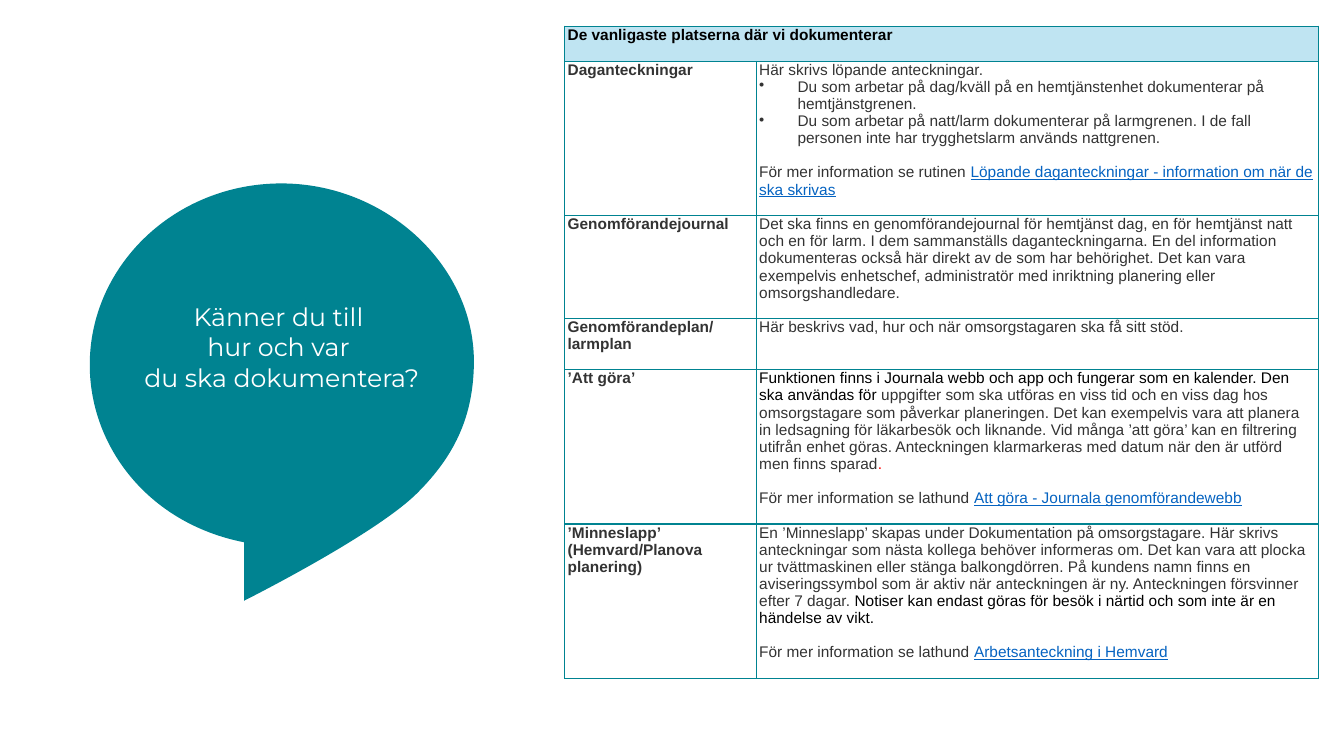
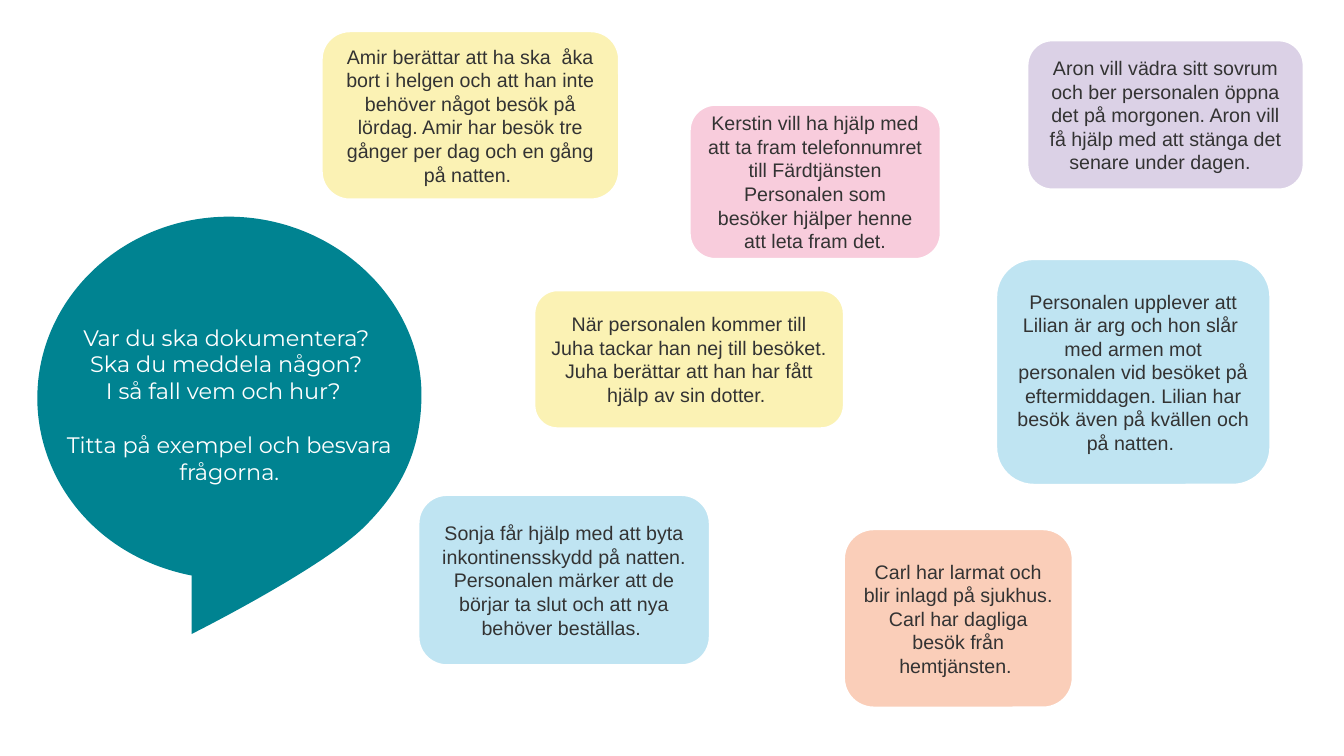
from lxml.etree import SubElement
from pptx import Presentation
from pptx.dml.color import RGBColor
from pptx.enum.shapes import MSO_SHAPE as Shape
from pptx.enum.text import MSO_ANCHOR as Anchor, PP_ALIGN as Align
from pptx.oxml import parse_xml
from pptx.oxml.ns import nsdecls, qn
from pptx.util import Inches, Pt

TEAL, SKY, YELLOW = "008391", "BFE4F2", "FBF2B4"
PEACH, LILAC, PINK = "FACEB9", "DBD1E6", "F8CCDC"
WHITE, BLACK, INK, LINK, RED = "FFFFFF", "000000", "333333", "0563C1", "FF0000"
BODY_FONT, BALLOON_FONT = "Arial", "Montserrat"

# Balloon outline, relative to its top left corner: one point ends a line,
# three points (two controls and an end) make a curve
BALLOON_START = (3.25, 3.07)
BALLOON_SEGMENTS = [
    [(3.61, 2.71), (3.8, 2.33), (3.81, 1.8)],
    [(3.83, 0.83), (2.95, 0), (1.9, 0)],
    [(0.85, 0), (0, 0.81), (0, 1.8)],
    [(0, 2.6), (0.57, 3.37), (1.53, 3.56)],
    [(1.53, 4.14)],
    [(1.53, 4.14), (2.83, 3.49), BALLOON_START],
]


def rgb(value):
    return RGBColor.from_string(value)


def bend(box, segments):
    """Turn the straight sides of a freeform into curves where a segment has controls."""
    sides = list(box._element.iter(qn("a:lnTo")))
    for side, points in zip(sides, segments):
        if len(points) == 3:
            side.tag = qn("a:cubicBezTo")
            side.clear()
            for x, y in points:
                point = SubElement(side, qn("a:pt"))
                point.set("x", str(Inches(x)))
                point.set("y", str(Inches(y)))


class Deck:
    def __init__(self):
        self.deck = Presentation()
        self.deck.slide_width, self.deck.slide_height = Inches(13.33), Inches(7.5)
        self.page = None

    def add_page(self):
        self.page = self.deck.slides.add_slide(self.deck.slide_layouts[6])

    def style(self, span, font, size, color, bold=False):
        span.font.name, span.font.size, span.font.bold = font, Pt(size), bold
        span.font.color.rgb = rgb(color)

    def centre_text(self, box, text, font, size, color):
        frame = box.text_frame
        frame.word_wrap, frame.vertical_anchor = True, Anchor.MIDDLE
        frame.text = text
        for para in frame.paragraphs:
            para.alignment = Align.CENTER
            for span in para.runs:
                self.style(span, font, size, color)

    def balloon(self, left, top, lines, size, bottom, gap_before=None):
        """Draw the speech balloon; gap_before is the line that starts a new block."""
        corners = [(Inches(left + x), Inches(top + y)) for x, y in
                   [BALLOON_START, *(segment[-1] for segment in BALLOON_SEGMENTS)]]
        builder = self.page.shapes.build_freeform(*corners[0])
        builder.add_line_segments(corners[1:], close=True)
        box = builder.convert_to_shape()
        bend(box, BALLOON_SEGMENTS)
        box.shadow.inherit = False
        box.fill.solid()
        box.fill.fore_color.rgb = rgb(TEAL)
        box.line.fill.background()
        frame = box.text_frame
        frame.margin_left = frame.margin_right = frame.margin_top = Inches(0.12)
        frame.margin_bottom = Inches(bottom)
        self.centre_text(box, "\n".join(lines), BALLOON_FONT, size, WHITE)
        if gap_before is not None:
            frame.paragraphs[gap_before].space_before = Pt(19)

    def note(self, left, top, width, height, color, text):
        box = self.page.shapes.add_shape(
            Shape.ROUNDED_RECTANGLE, *map(Inches, (left, top, width, height)))
        box.shadow.inherit = False
        box.fill.solid()
        box.fill.fore_color.rgb = rgb(color)
        box.line.color.rgb, box.line.width = rgb(WHITE), Pt(1.5)
        self.centre_text(box, text, BODY_FONT, 14, INK)

    def cell(self, cell, paras, fill=WHITE, bold=False):
        """Fill a cell; each paragraph is a kind and a list of (text, colour)."""
        cell.margin_left = cell.margin_right = Inches(0.03)
        cell.margin_top = cell.margin_bottom = 0
        cell.fill.solid()
        cell.fill.fore_color.rgb = rgb(fill)
        props = cell._tc.get_or_add_tcPr()
        for place, side in enumerate(("lnL", "lnR", "lnT", "lnB")):
            props.insert(place, parse_xml(
                f'<a:{side} {nsdecls("a")} w="12700"><a:solidFill>'
                f'<a:srgbClr val="{TEAL}"/></a:solidFill></a:{side}>'))
        frame = cell.text_frame
        frame.text = "\n".join("" for _ in paras)
        for para, (kind, spans) in zip(frame.paragraphs, paras):
            if kind == "bullet":
                indent = para._p.get_or_add_pPr()
                indent.set("marL", str(Inches(0.38)))
                indent.set("indent", str(-Inches(0.38)))
                SubElement(indent, qn("a:buChar")).set("char", "•")
            elif kind == "more":
                para.space_before = Pt(12)
            for text, color in spans:
                span = para.add_run()
                span.text = text
                self.style(span, BODY_FONT, 11, color, bold)
                span.font.underline = color == LINK

    def table(self, left, top, widths, heights, title, rows):
        frame = self.page.shapes.add_table(
            len(heights), len(widths), Inches(left), Inches(top),
            Inches(sum(widths)), Inches(sum(heights)))
        table = frame.table
        for column, width in zip(table.columns, widths):
            column.width = Inches(width)
        for row, height in zip(table.rows, heights):
            row.height = Inches(height)
        table.cell(0, 0).merge(table.cell(0, 1))
        self.cell(table.cell(0, 0), [plain(title, BLACK)], SKY, True)
        self.cell(table.cell(0, 1), [], SKY)
        for number, (labels, paras) in enumerate(rows, 1):
            self.cell(table.cell(number, 0), [plain(label) for label in labels], bold=True)
            self.cell(table.cell(number, 1), paras)


def plain(text, color=INK):
    return "plain", [(text, color)]


def bullet(text):
    return "bullet", [(text, INK)]


def more(lead, link):
    return "more", [(f"För mer information se {lead} ", INK), (link, LINK)]


PLACES = [
    (["Daganteckningar"], [
        plain("Här skrivs löpande anteckningar."),
        bullet("Du som arbetar på dag/kväll på en hemtjänstenhet dokumenterar på "
               "hemtjänstgrenen."),
        bullet("Du som arbetar på natt/larm dokumenterar på larmgrenen. I de fall "
               "personen inte har trygghetslarm används nattgrenen."),
        more("rutinen", "Löpande daganteckningar - information om när de ska skrivas"),
    ]),
    (["Genomförandejournal"], [
        plain("Det ska finns en genomförandejournal för hemtjänst dag, en för hemtjänst "
              "natt och en för larm. I dem sammanställs daganteckningarna. En del "
              "information dokumenteras också här direkt av de som har behörighet. Det "
              "kan vara exempelvis enhetschef, administratör med inriktning planering "
              "eller omsorgshandledare."),
    ]),
    (["Genomförandeplan/", "larmplan"], [
        plain("Här beskrivs vad, hur och när omsorgstagaren ska få sitt stöd."),
    ]),
    (["’Att göra’"], [
        ("plain", [
            ("Funktionen finns i Journala webb och app och fungerar som en kalender. "
             "Den ska användas för ", BLACK),
            ("uppgifter som ska utföras en viss tid och en viss dag hos omsorgstagare "
             "som påverkar planeringen. Det kan exempelvis vara att planera in "
             "ledsagning för läkarbesök och liknande. Vid många ’att göra’ kan en "
             "filtrering utifrån enhet göras. Anteckningen klarmarkeras med datum när "
             "den är utförd men finns sparad", INK),
            (".", RED),
        ]),
        more("lathund", "Att göra - Journala genomförandewebb"),
    ]),
    (["’Minneslapp’ (Hemvard/Planova planering)"], [
        ("plain", [
            ("En ’Minneslapp’ skapas under Dokumentation på omsorgstagare. Här skrivs "
             "anteckningar som nästa kollega behöver informeras om. Det kan vara att "
             "plocka ur tvättmaskinen eller stänga balkongdörren. På kundens namn finns "
             "en aviseringssymbol som är aktiv när anteckningen är ny. Anteckningen "
             "försvinner efter 7 dagar.", INK),
            (" Notiser kan endast göras för besök i närtid och som inte är en händelse "
             "av vikt.", BLACK),
        ]),
        more("lathund", "Arbetsanteckning i Hemvard"),
    ]),
]

NOTES = [
    (3.19, 0.31, 2.95, 1.67, YELLOW,
     "Amir berättar att ha ska  åka bort i helgen och att han inte behöver något besök "
     "på lördag. Amir har besök tre gånger per dag och en gång på natten. "),
    (9.88, 2.57, 2.72, 2.24, SKY,
     "Personalen upplever att Lilian är arg och hon slår  med armen mot personalen vid "
     "besöket på eftermiddagen. Lilian har besök även på kvällen och på natten. "),
    (4.15, 4.91, 2.89, 1.69, SKY,
     "Sonja får hjälp med att byta inkontinensskydd på natten. Personalen märker att de "
     "börjar ta slut och att nya behöver beställas. "),
    (8.37, 5.25, 2.27, 1.77, PEACH,
     "Carl har larmat och blir inlagd på sjukhus. Carl har dagliga besök från "
     "hemtjänsten. "),
    (5.3, 2.88, 3.07, 1.37, YELLOW,
     "När personalen kommer till Juha tackar han nej till besöket. Juha berättar att han "
     "har fått hjälp av sin dotter. "),
    (10.19, 0.4, 2.74, 1.48, LILAC,
     "Aron vill vädra sitt sovrum och ber personalen öppna det på morgonen. Aron vill få "
     "hjälp med att stänga det senare under dagen.  "),
    (6.84, 1.04, 2.49, 1.53, PINK,
     "Kerstin vill ha hjälp med att ta fram telefonnumret till Färdtjänsten Personalen "
     "som besöker hjälper henne att leta fram det."),
]


def main():
    deck = Deck()

    deck.add_page()
    deck.balloon(0.89, 1.82, ["Känner du till ", "hur och var ", "du ska dokumentera?"],
                 size=18, bottom=1.02)
    deck.table(5.6, 0.26, [1.9, 5.58], [0.35, 1.53, 1.02, 0.51, 1.53, 1.53],
               "De vanligaste platserna där vi dokumenterar", PLACES)

    deck.add_page()
    deck.balloon(0.37, 2.15, ["Var du ska dokumentera? ", "Ska du meddela någon? ",
                              "I så fall vem och hur?  ",
                              "Titta på exempel och besvara frågorna."],
                 size=16, bottom=0.54, gap_before=3)
    for note in NOTES:
        deck.note(*note)

    deck.deck.save("out.pptx")


if __name__ == "__main__":
    main()
